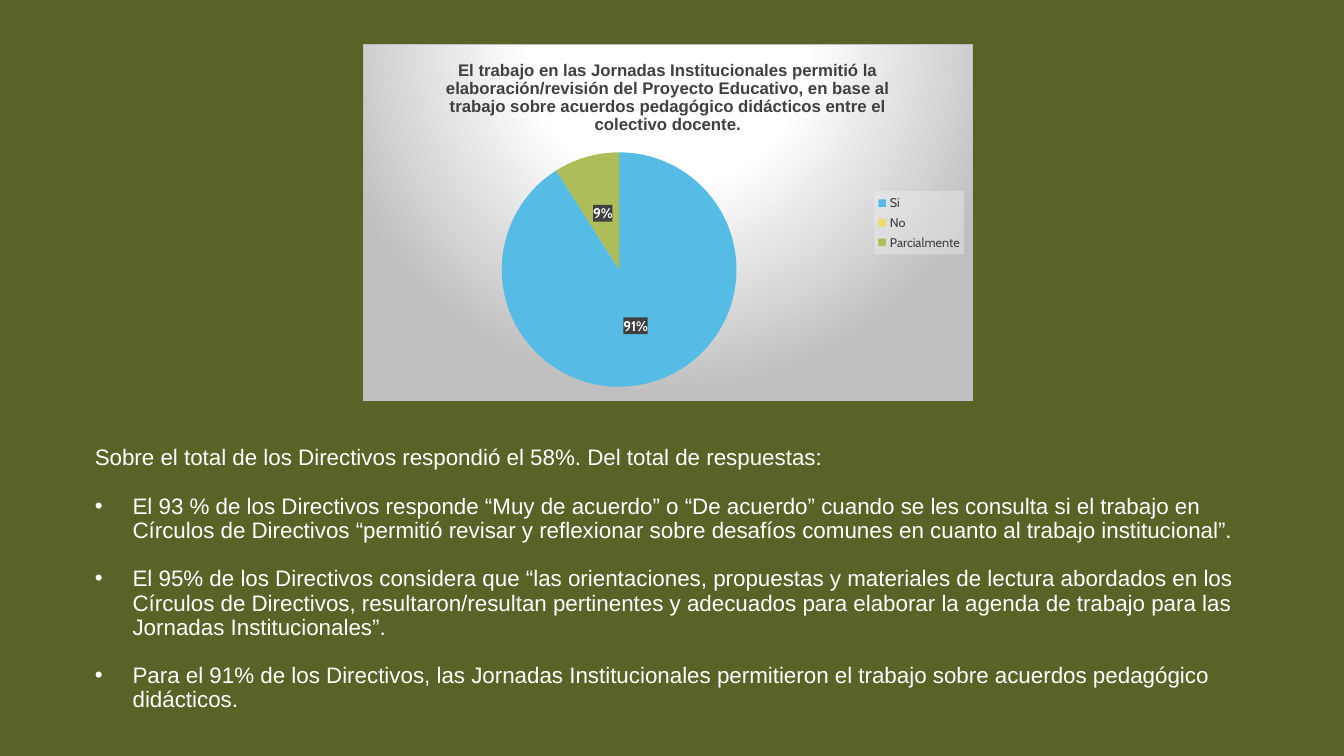
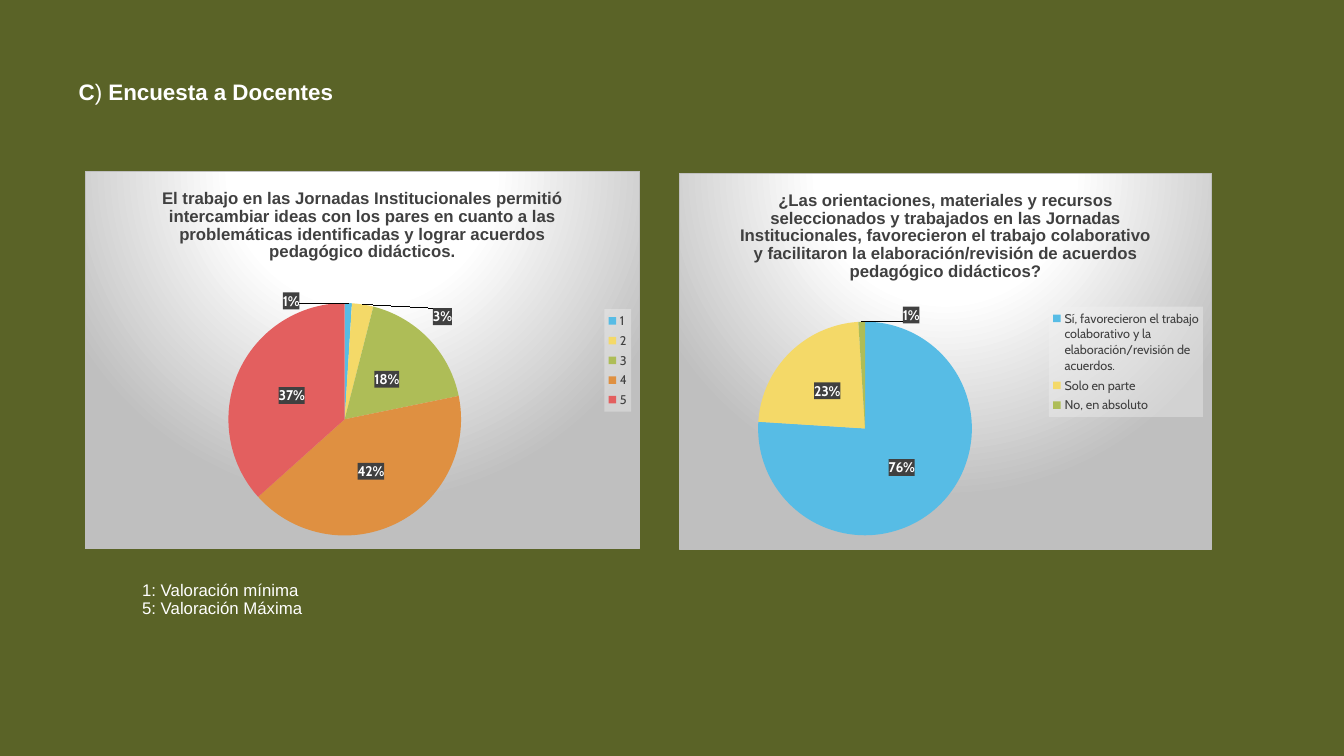
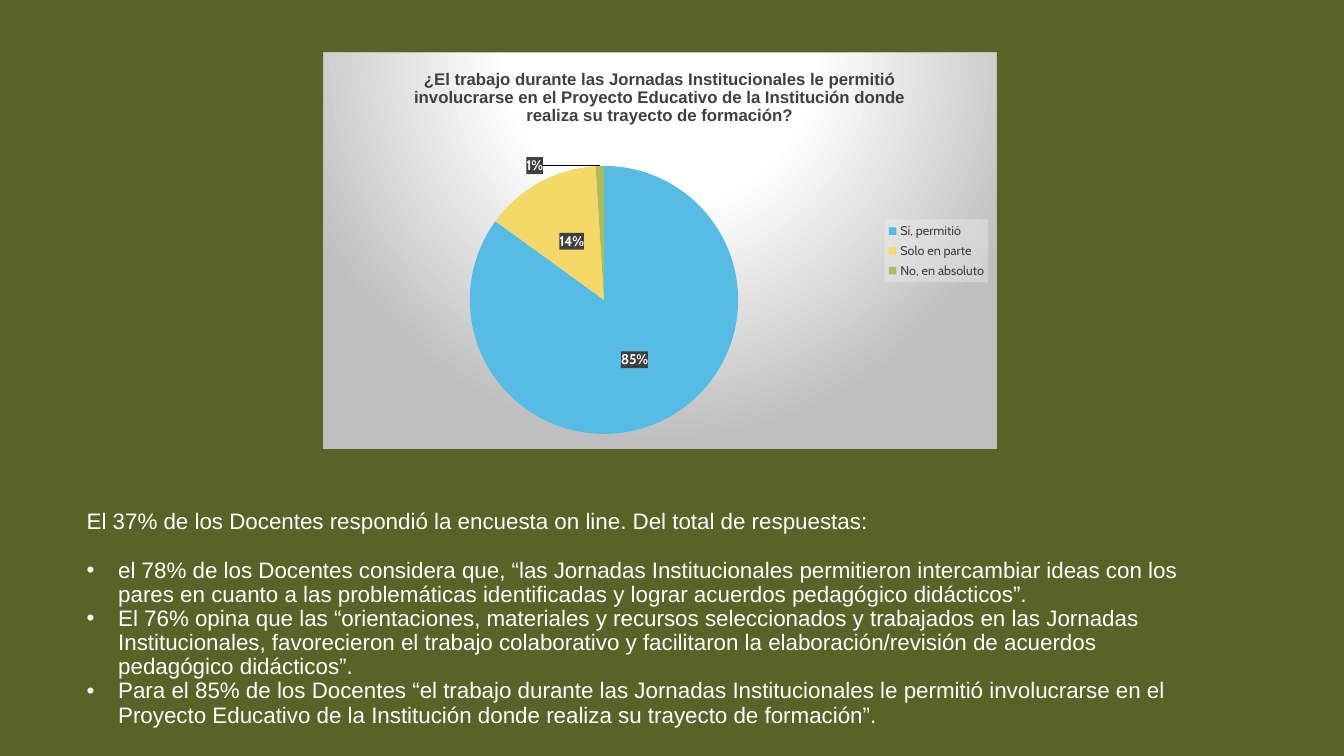
from copy import deepcopy
from dataclasses import dataclass, field

from lxml import etree
from pptx import Presentation
from pptx.chart.data import CategoryChartData
from pptx.dml.color import RGBColor
from pptx.enum.chart import XL_CHART_TYPE, XL_LABEL_POSITION, XL_LEGEND_POSITION
from pptx.enum.text import MSO_ANCHOR, MSO_AUTO_SIZE, PP_ALIGN
from pptx.oxml import parse_xml
from pptx.oxml.ns import nsdecls, qn
from pptx.util import Pt

PIE = XL_CHART_TYPE.PIE
CENTER = XL_LABEL_POSITION.CENTER
RIGHT = XL_LEGEND_POSITION.RIGHT
TOP = MSO_ANCHOR.TOP
NO_FIT = MSO_AUTO_SIZE.NONE
LEFT = PP_ALIGN.LEFT

COLORS = {
    "olive": "5A6327",
    "white": "FFFFFF",
    "dark": "404040",
    "silver": "BFBFBF",
    "pale": "F2F2F2",
}
SLICES = ["57BCE5", "F4D968", "AEBD57", "DF9041", "E35F5F"]
TEXT_FONT = "Arial"
CHART_FONT = "Cabin"


@dataclass
class Box:
    x: float
    y: float
    w: float
    h: float


@dataclass
class Run:
    text: str
    bold: bool = False


@dataclass
class Para:
    runs: list[Run]
    bullet: bool = False
    before: float = 0


@dataclass
class Pie:
    box: Box
    title: str
    cats: list[str]
    vals: list[int | None]
    disc: tuple[float, float, float]
    moved: dict[int, tuple[float, float]] = field(default_factory=dict)


@dataclass
class Page:
    pies: list[Pie]
    body_box: Box
    body: list[Para]
    size: float = 16
    indent: float = 0
    title: Para | None = None


def rgb(name: str) -> RGBColor:
    return RGBColor.from_string(COLORS[name])


def style(font, name: str, size: float, color: str, bold: bool = False) -> None:
    font.name = name
    font.size = Pt(size)
    font.bold = bold
    font.color.rgb = rgb(color)


def solid(color: str, alpha: int = 100) -> str:
    return (f'<a:solidFill><a:srgbClr val="{COLORS[color]}">'
            f'<a:alpha val="{alpha * 1000}"/></a:srgbClr></a:solidFill>')


def sp_pr(content: str):
    return parse_xml(f'<c:spPr {nsdecls("c", "a")}>{content}</c:spPr>')


def layout(**parts: str | float):
    items = "".join(f'<c:{k} val="{v}"/>' for k, v in parts.items())
    return parse_xml(f'<c:layout {nsdecls("c")}><c:manualLayout>{items}'
                     '</c:manualLayout></c:layout>')


def fill_placeholder(sp, box: Box, paras: list[Para], size: float, indent: float) -> None:
    sp.left, sp.top, sp.width, sp.height = Pt(box.x), Pt(box.y), Pt(box.w), Pt(box.h)
    tf = sp.text_frame
    tf.word_wrap = True
    tf.auto_size = NO_FIT
    tf.vertical_anchor = TOP
    for i, para in enumerate(paras):
        p = tf.add_paragraph() if i else tf.paragraphs[0]
        p.alignment = LEFT
        p.line_spacing = 0.9
        p.space_before = Pt(para.before)
        p.space_after = Pt(0)
        p_pr = p._p.get_or_add_pPr()
        margin = Pt(indent) if para.bullet else 0
        p_pr.set("marL", str(margin))
        p_pr.set("indent", str(-margin))
        if para.bullet:
            etree.SubElement(p_pr, qn("a:buFont"), typeface=TEXT_FONT)
            etree.SubElement(p_pr, qn("a:buChar"), char="•")
        else:
            etree.SubElement(p_pr, qn("a:buNone"))
        for run in para.runs:
            r = p.add_run()
            r.text = run.text
            style(r.font, TEXT_FONT, size, "white", run.bold)


def format_labels(chart, moved: dict[int, tuple[float, float]]) -> None:
    labels = chart.plots[0].series[0].data_labels
    labels.show_value = False
    labels.show_percentage = True
    labels.number_format = "0%"
    labels.number_format_is_linked = False
    labels.position = CENTER
    style(labels.font, CHART_FONT, 10, "white", True)
    group = chart.element.xpath(".//c:ser/c:dLbls")[0]
    group.find(qn("c:txPr")).addprevious(sp_pr(solid("dark")))
    shared = [e for e in group if e.tag != qn("c:showLeaderLines")]
    for pos, (idx, (dx, dy)) in enumerate(moved.items()):
        label = parse_xml(f'<c:dLbl {nsdecls("c")}><c:idx val="{idx}"/></c:dLbl>')
        label.append(layout(x=dx, y=dy))
        label.extend(deepcopy(e) for e in shared)
        group.insert(pos, label)


def add_pie(slide, pie: Pie) -> None:
    data = CategoryChartData()
    data.categories = pie.cats
    data.add_series("Series 1", pie.vals)
    box = pie.box
    chart = slide.shapes.add_chart(PIE, Pt(box.x), Pt(box.y), Pt(box.w), Pt(box.h), data).chart
    style(chart.font, CHART_FONT, 10, "white")
    chart.plots[0].vary_by_categories = True

    stops = "".join(f'<a:gs pos="{pos * 1000}"><a:srgbClr val="{COLORS[c]}"/></a:gs>'
                    for pos, c in ((0, "white"), (39, "white"), (100, "silver")))
    chart.element.find(qn("c:chart")).addnext(sp_pr(
        f'<a:gradFill><a:gsLst>{stops}</a:gsLst><a:path path="circle">'
        '<a:fillToRect l="50000" t="-80000" r="50000" b="180000"/></a:path></a:gradFill>'
        f'<a:ln w="{Pt(0.75)}">{solid("silver")}</a:ln>'))

    chart.has_title = True
    r = chart.chart_title.text_frame.paragraphs[0].add_run()
    r.text = pie.title
    style(r.font, TEXT_FONT, 12, "dark", True)

    chart.has_legend = True
    legend = chart.legend
    legend.position = RIGHT
    legend.include_in_layout = False
    style(legend.font, CHART_FONT, 9, "dark")
    chart.element.xpath(".//c:legend/c:txPr")[0].addprevious(sp_pr(solid("pale", 39)))

    for i in range(len(pie.vals)):
        fill = chart.plots[0].series[0].points[i].format.fill
        fill.solid()
        fill.fore_color.rgb = RGBColor.from_string(SLICES[i])
    format_labels(chart, pie.moved)

    x, y, d = pie.disc
    area = chart.element.xpath(".//c:plotArea")[0]
    for old in area.findall(qn("c:layout")):
        area.remove(old)
    area.insert(0, layout(layoutTarget="inner", xMode="edge", yMode="edge",
                          x=x / box.w, y=y / box.h, w=d / box.w, h=d / box.h))


def add_page(prs, page: Page) -> None:
    slide = prs.slides.add_slide(prs.slide_layouts[1])
    title, body = slide.placeholders
    if page.title:
        fill_placeholder(title, Box(49, 54.7, 816.5, 24.5), [page.title], 16, 0)
    else:
        title.element.getparent().remove(title.element)
    fill_placeholder(body, page.body_box, page.body, page.size, page.indent)
    for pie in page.pies:
        add_pie(slide, pie)


PAGES = [
    Page(
        pies=[Pie(
            Box(259.2, 31.7, 435.6, 254.9),
            "El trabajo en las Jornadas Institucionales permitió la elaboración/revisión del "
            "Proyecto Educativo, en base al trabajo sobre acuerdos pedagógico didácticos entre "
            "el colectivo docente.",
            ["Sí", "No", "Parcialmente"], [91, None, 9], (99, 77, 168))],
        body_box=Box(60.5, 315.4, 833.8, 222),
        indent=27,
        body=[
            Para([Run("Sobre el total de los Directivos respondió el 58%. Del total de respuestas:")]),
            Para([Run("El 93 % de los Directivos responde “Muy de acuerdo” o “De acuerdo” cuando se "
                      "les consulta si el trabajo en Círculos de Directivos “permitió revisar y "
                      "reflexionar sobre desafíos comunes en cuanto al trabajo institucional”.")],
                 True, 17.3),
            Para([Run("El 95% de los Directivos considera que “las orientaciones, propuestas y "
                      "materiales de lectura abordados en los Círculos de Directivos, "
                      "resultaron/resultan pertinentes y adecuados para elaborar la agenda de "
                      "trabajo para las Jornadas Institucionales”.")], True, 17.3),
            Para([Run("Para el 91% de los Directivos, las Jornadas Institucionales permitieron el "
                      "trabajo sobre acuerdos pedagógico didácticos.")], True, 17.3),
        ],
    ),
    Page(
        title=Para([Run("C", True), Run(")"), Run(" Encuesta a Docentes", True)]),
        pies=[
            Pie(Box(60.5, 122.4, 396.7, 270),
                "El trabajo en las Jornadas Institucionales permitió intercambiar ideas con los "
                "pares en cuanto a las problemáticas identificadas y lograr acuerdos pedagógico "
                "didácticos.",
                ["1", "2", "3", "4", "5"], [1, 3, 18, 42, 37], (102.5, 94, 166.5),
                {0: (-0.1, -0.16), 1: (0.16, -0.12)}),
            Pie(Box(485.3, 123.8, 380.2, 269.3),
                "¿Las orientaciones, materiales y recursos seleccionados y trabajados en las "
                "Jornadas Institucionales, favorecieron el trabajo colaborativo y facilitaron la "
                "elaboración/revisión de acuerdos pedagógico didácticos?",
                ["Sí, favorecieron el trabajo colaborativo y la elaboración/revisión de acuerdos.",
                 "Solo en parte", "No, en absoluto"],
                [76, 23, 1], (56, 106, 153), {2: (0.09, -0.16)}),
        ],
        body_box=Box(94.3, 411.8, 306, 33.1),
        size=12,
        body=[Para([Run("1: Valoración mínima")]), Para([Run("5: Valoración Máxima")])],
    ),
    Page(
        pies=[Pie(
            Box(230.4, 37.4, 481.7, 283.7),
            "¿El trabajo durante las Jornadas Institucionales le permitió involucrarse en el "
            "Proyecto Educativo de la Institución donde realiza su trayecto de formación?",
            ["Sí, permitió", "Solo en parte", "No, en absoluto"],
            [85, 14, 1], (105, 81, 192), {2: (-0.1, -0.17)})],
        body_box=Box(54.7, 361, 822.2, 178),
        indent=22.5,
        body=[
            Para([Run("El 37% de los Docentes respondió la encuesta on line. Del total de respuestas:")]),
            Para([Run("el 78% de los Docentes considera que, “las Jornadas Institucionales "
                      "permitieron intercambiar ideas con los pares en cuanto a las problemáticas "
                      "identificadas y lograr acuerdos pedagógico didácticos”.")], True, 17.3),
            Para([Run("El 76% opina que las “orientaciones, materiales y recursos seleccionados y "
                      "trabajados en las Jornadas Institucionales, favorecieron el trabajo "
                      "colaborativo y facilitaron la elaboración/revisión de acuerdos pedagógico "
                      "didácticos”.")], True),
            Para([Run("Para el 85% de los Docentes “el trabajo durante las Jornadas "
                      "Institucionales le permitió involucrarse en el Proyecto Educativo de la "
                      "Institución donde realiza su trayecto de formación”.")], True),
        ],
    ),
]


def main() -> None:
    prs = Presentation()
    prs.slide_width, prs.slide_height = Pt(960), Pt(540)
    fill = prs.slide_master.background.fill
    fill.solid()
    fill.fore_color.rgb = rgb("olive")
    for page in PAGES:
        add_page(prs, page)
    prs.save("out.pptx")


if __name__ == "__main__":
    main()
